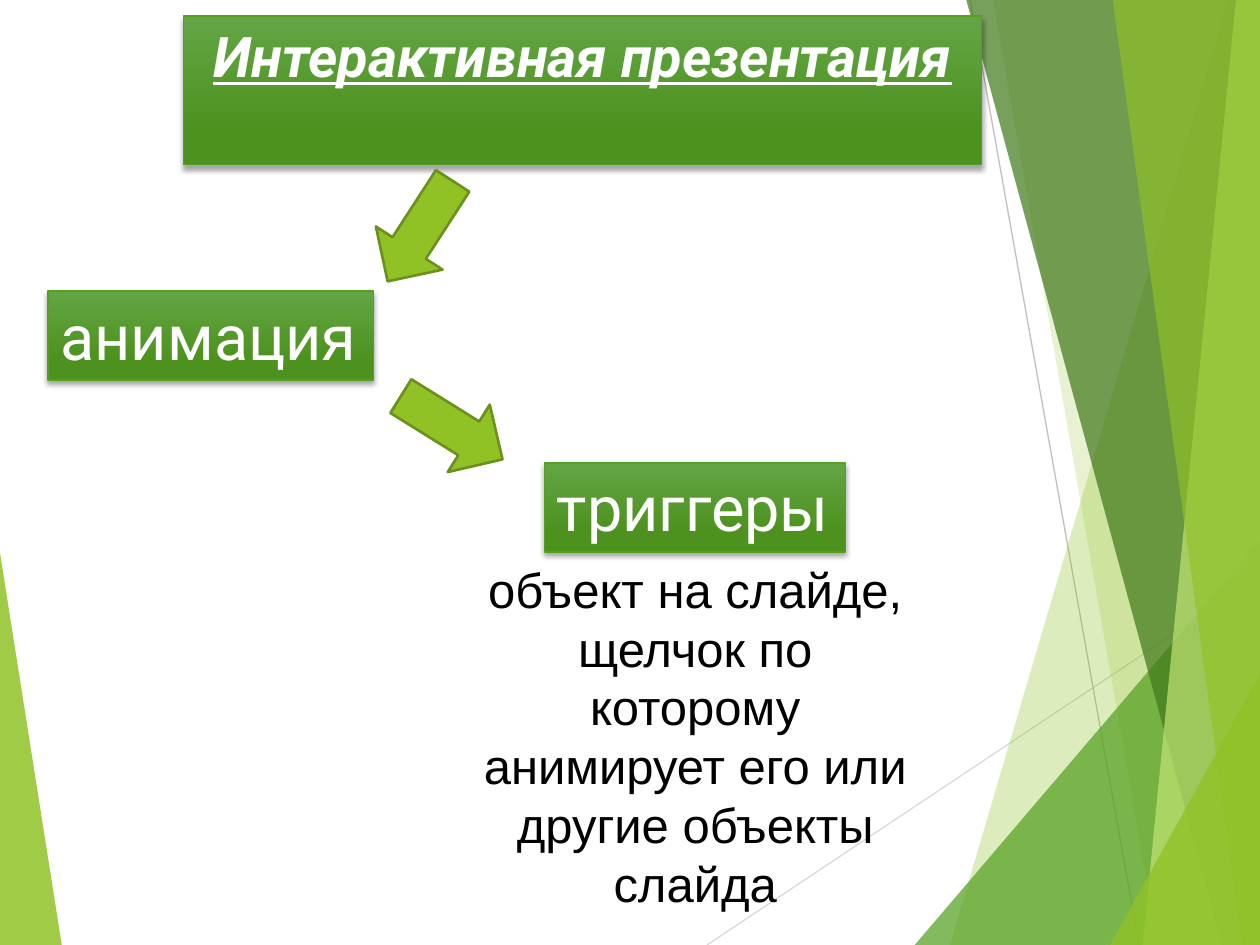
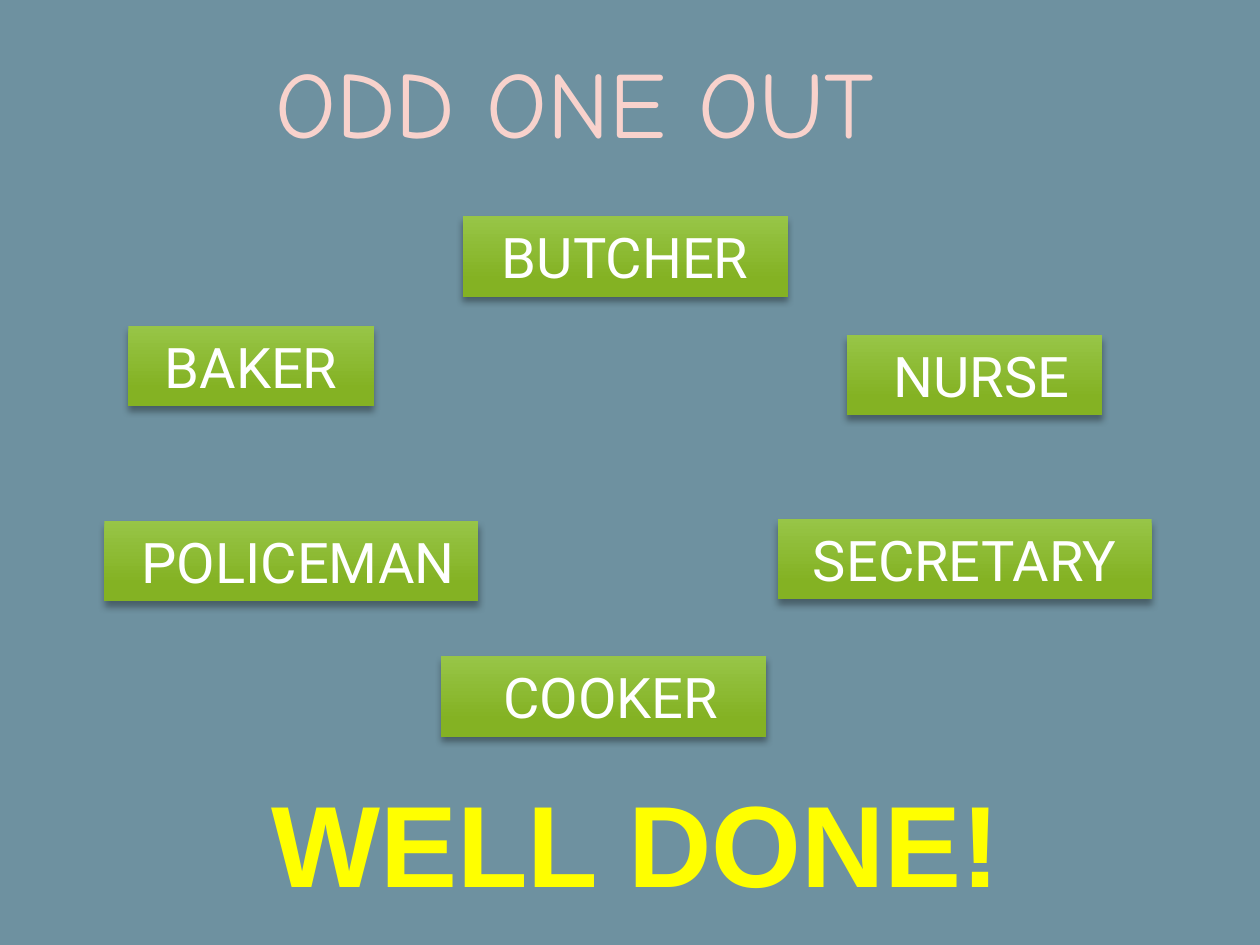
from dataclasses import dataclass

from lxml import etree
from pptx import Presentation
from pptx import util as u
from pptx.dml import color
from pptx.enum import shapes, text
from pptx.oxml import ns

W, H = 720, 540
CENTER, LEFT = text.PP_ALIGN.CENTER, text.PP_ALIGN.LEFT


@dataclass(frozen=True)
class Theme:
    # Colours
    white: str = "FFFFFF"
    black: str = "000000"
    slate: str = "6E91A0"
    lime: str = "90C226"
    lime_edge: str = "6B901C"
    pale_lime: str = "C0E474"
    green: str = "54A021"
    dark_green: str = "3F7819"
    green_fade: tuple = ("63A545", "4D921E")
    lime_fade: tuple = ("97C547", "84B223")
    pink: str = "F8D2CC"
    yellow: str = "FFFF00"
    light_grey: str = "D9D9D9"
    grey: str = "BFBFBF"
    # Fonts and sizes
    label_font: str = "Roboto"
    body_font: str = "Arial"
    hand_font: str = "Comic Neue"
    body: int = 28
    label: int = 32
    term: int = 36
    heading: int = 54
    praise: int = 66


def rgb(value):
    return color.RGBColor.from_string(value)


def add_alpha(clr, percent):
    etree.SubElement(clr, ns.qn("a:alpha"), val=str(percent * 1000))


class Deck:
    def __init__(self, theme):
        self.t = theme
        self.prs = Presentation()
        self.prs.slide_width, self.prs.slide_height = u.Pt(W), u.Pt(H)
        self.s = None

    def slide(self, background):
        self.s = self.prs.slides.add_slide(self.prs.slide_layouts[6])
        fill = self.s.background.fill
        fill.solid()
        fill.fore_color.rgb = rgb(background)

    def polygon(self, points, fill, opacity):
        pts = [(u.Pt(x), u.Pt(y)) for x, y in points]
        fb = self.s.shapes.build_freeform(*pts[0], scale=1.0)
        fb.add_line_segments(pts[1:], close=True)
        sp = fb.convert_to_shape()
        sp.shadow.inherit = False
        sp.fill.solid()
        sp.fill.fore_color.rgb = rgb(fill)
        add_alpha(sp.element.spPr.find(".//" + ns.qn("a:srgbClr")), opacity)
        sp.line.fill.background()

    def line(self, start, end, clr):
        cx = self.s.shapes.add_connector(
            shapes.MSO_CONNECTOR.STRAIGHT, *map(u.Pt, start + end))
        cx.line.color.rgb = rgb(clr)
        cx.line.width = u.Pt(0.75)
        etree.SubElement(cx.element.spPr, ns.qn("a:effectLst"))

    def arrow(self, x, y, rotation):
        sp = self.s.shapes.add_shape(
            shapes.MSO_SHAPE.DOWN_ARROW, *map(u.Pt, (x, y, 45.4, 68.4)))
        sp.shadow.inherit = False
        sp.rotation = rotation
        sp.fill.solid()
        sp.fill.fore_color.rgb = rgb(self.t.lime)
        sp.line.color.rgb = rgb(self.t.lime_edge)
        sp.line.width = u.Pt(1.5)

    def add_words(self, sp, words, size, clr, font, align=CENTER,
                  bold=False, italic=False, underline=False):
        tf = sp.text_frame
        tf.word_wrap = True
        tf.vertical_anchor = text.MSO_ANCHOR.TOP
        p = tf.paragraphs[0]
        p.alignment = align
        r = p.add_run()
        r.text = words
        r.font.name, r.font.size = font, u.Pt(size)
        r.font.color.rgb = rgb(clr)
        r.font.bold, r.font.italic, r.font.underline = bold, italic, underline

    def text_box(self, frame, words, size, clr, font, **styles):
        sp = self.s.shapes.add_textbox(*map(u.Pt, frame))
        self.add_words(sp, words, size, clr, font, **styles)

    def label(self, frame, words, size, fade, edge=None, shadow=(4, 3), **styles):
        sp = self.s.shapes.add_shape(
            shapes.MSO_SHAPE.RECTANGLE, *map(u.Pt, frame))
        sp.fill.gradient()
        sp.fill.gradient_angle = 270
        for stop, clr, position in zip(sp.fill.gradient_stops, fade, (0, 0.78)):
            stop.color.rgb = rgb(clr)
            stop.position = position
        if edge:
            sp.line.color.rgb = rgb(edge)
            sp.line.width = u.Pt(1)
        else:
            sp.line.fill.background()
        self.drop_shadow(sp, *shadow)
        self.add_words(sp, words, size, self.t.white, self.t.label_font, **styles)

    def drop_shadow(self, sp, blur, distance):
        sp.shadow.inherit = False
        effects = sp.element.spPr.find(ns.qn("a:effectLst"))
        shadow = etree.SubElement(
            effects, ns.qn("a:outerShdw"), blurRad=str(u.Pt(blur)),
            dist=str(u.Pt(distance)), dir="5400000", rotWithShape="0")
        clr = etree.SubElement(shadow, ns.qn("a:srgbClr"), val=self.t.black)
        add_alpha(clr, 35)

    def facets(self):
        t = self.t
        self.polygon([(0, 316), (35.3, H), (0, H)], t.lime, 85)
        self.line((404, H), (W, 329.4), t.light_grey)
        self.line((554.4, 0), (650.9, H), t.grey)
        # Each facet runs from its slanted edge to the right side of the slide
        for start, end, clr, opacity in (
            ((702, 0), (542.9, H), t.lime, 30),
            ((567.4, 0), (661.7, H), t.lime, 20),
            ((522.7, H), (W, 308.9), t.green, 72),
            ((552.2, 0), (698.4, H), t.dark_green, 70),
            ((706.3, 0), (653, H), t.pale_lime, 70),
            ((635.8, 0), (709.9, H), t.lime, 65),
            ((634.3, H), (W, 385.2), t.lime, 80),
        ):
            corners = [(W, H), (W, 0)] if start[1] == 0 else [(W, H)]
            self.polygon([start, end] + corners, clr, opacity)


def interactive_slide(d):
    t = d.t
    d.slide(t.white)
    d.facets()

    # Title and terms
    green = dict(fade=t.green_fade, edge=t.green, shadow=(3, 2))
    d.label((104.9, 9, 456, 85), "Интерактивная презентация", t.label,
            bold=True, italic=True, underline=True, **green)
    d.label((311.2, 264.4, 172, 51), "триггеры", t.term, align=LEFT, **green)
    d.text_box((268, 316, 258.5, 211),
               "объект на слайде, щелчок по которому анимирует его "
               "или другие объекты слайда", t.body, t.black, t.body_font)
    d.label((27.5, 166.2, 186, 51), "анимация", t.term, align=LEFT, **green)

    # Arrows from the title down to the terms
    d.arrow(217.4, 97.9, 32.9)
    d.arrow(235.4, 210.2, 301.9)


def odd_one_out_slide(d):
    t = d.t
    d.slide(t.slate)
    d.text_box((150.5, 21.6, 534, 73), "ODD ONE OUT", t.heading, t.pink,
               t.hand_font, align=LEFT)

    # Jobs to choose from
    for x, y, width, job in (
        (73.3, 186.3, 140.4, "BAKER"),
        (264.4, 123.6, 185.8, "BUTCHER"),
        (484, 191.4, 146, " NURSE"),
        (59.6, 297.6, 213.8, " POLICEMAN"),
        (444.4, 296.6, 213.8, "SECRETARY"),
        (252.1, 375, 185.8, " COOKER"),
    ):
        d.label((x, y, width, 46), job, t.label, t.lime_fade)

    d.text_box((93.6, 437.8, 540, 87), "WELL DONE!", t.praise, t.yellow,
               t.body_font, bold=True)


def main():
    d = Deck(Theme())
    interactive_slide(d)
    odd_one_out_slide(d)
    d.prs.save("out.pptx")


if __name__ == "__main__":
    main()
